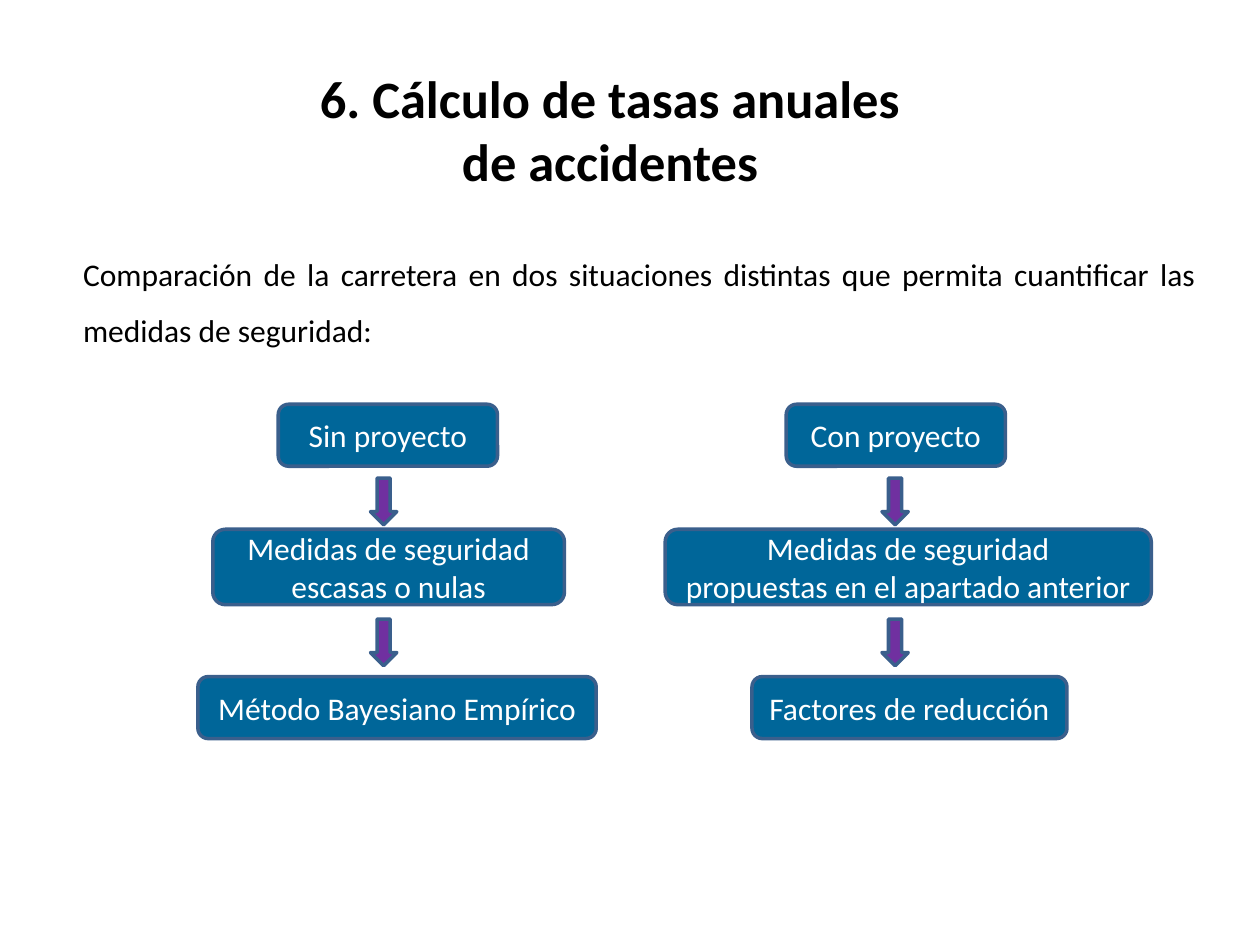
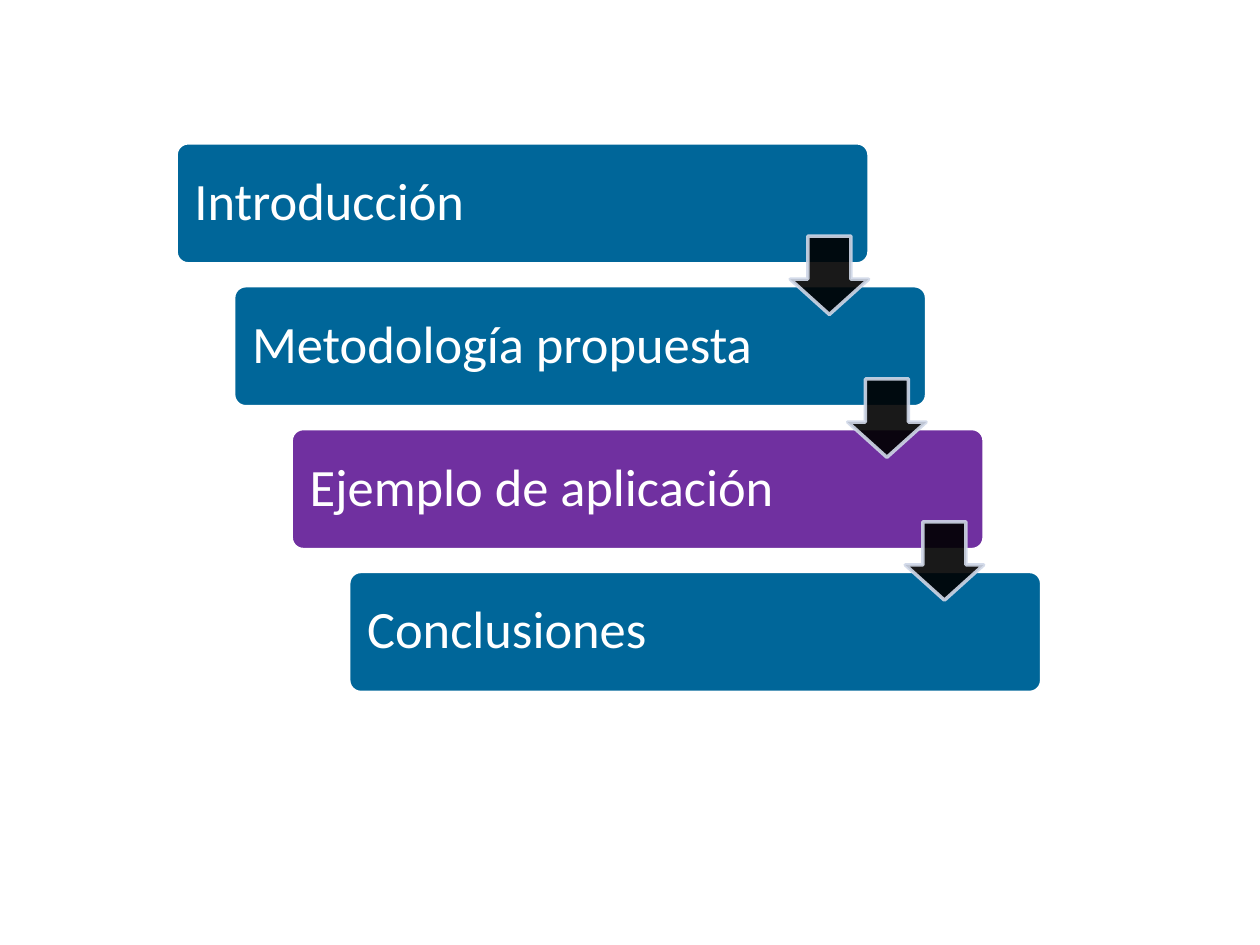
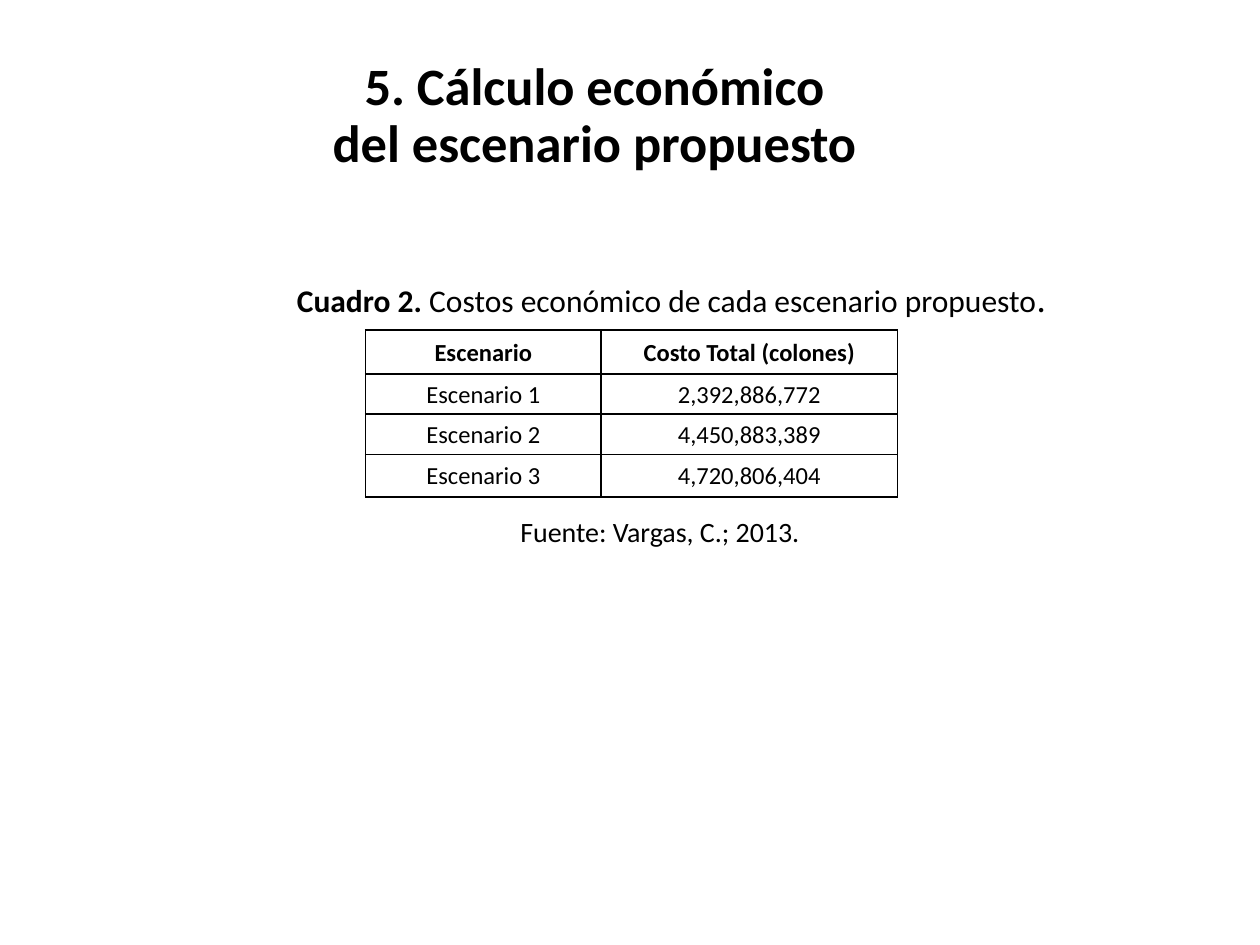
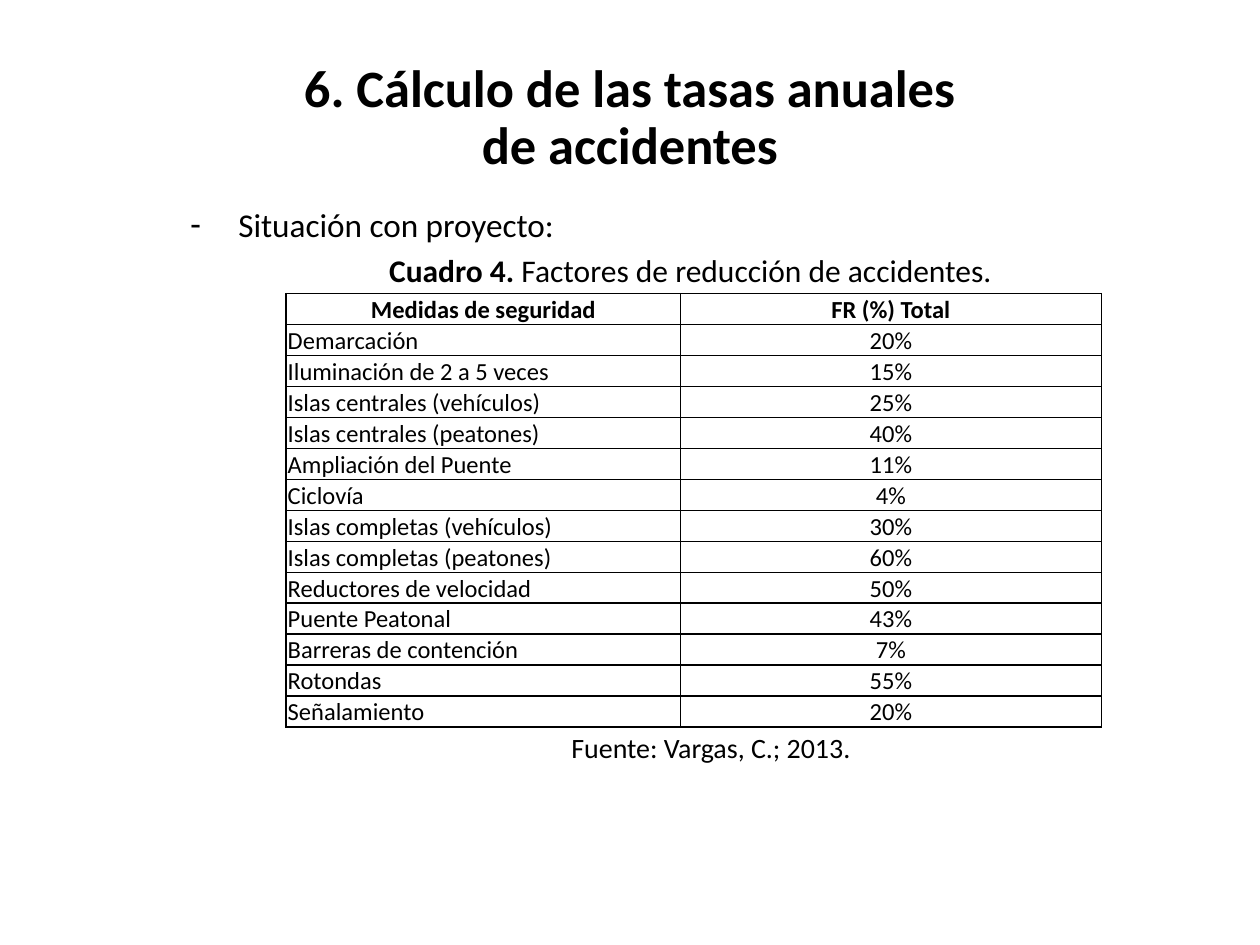
"""Builds four slides on annual accident rates and the cost of road safety scenarios."""
from lxml import etree
from pptx import Presentation
from pptx.dml.color import RGBColor
from pptx.enum.shapes import MSO_SHAPE
from pptx.enum.text import MSO_ANCHOR, MSO_AUTO_SIZE, PP_ALIGN
from pptx.oxml.ns import qn
from pptx.util import Cm, Pt

ROUNDED = MSO_SHAPE.ROUNDED_RECTANGLE
DOWN_ARROW = MSO_SHAPE.DOWN_ARROW
TOP, MIDDLE, BOTTOM = MSO_ANCHOR.TOP, MSO_ANCHOR.MIDDLE, MSO_ANCHOR.BOTTOM
LEFT, CENTER, JUSTIFY = PP_ALIGN.LEFT, PP_ALIGN.CENTER, PP_ALIGN.JUSTIFY

FONT = "Calibri"
BLACK, WHITE = "000000", "FFFFFF"
BLUE, PURPLE = "006699", "7030A0"
OUTLINE, PALE = "3A5F8C", "D0D8E8"
SOURCE = "Fuente: Vargas, C.; 2013."


def write(frame, lines, size, color=BLACK, bold=False, align=CENTER, spacing=1.0, anchor=TOP):
    """Fill a text frame, one paragraph per line and one run per part between bars."""
    frame.word_wrap = True
    frame.vertical_anchor = anchor
    for index, line in enumerate(lines):
        paragraph = frame.paragraphs[0] if index == 0 else frame.add_paragraph()
        paragraph.alignment = align
        paragraph.line_spacing = spacing
        paragraph.space_before = Pt(0)
        for part in line.split("|"):
            run = paragraph.add_run()
            run.text = part
            run.font.name = FONT
            run.font.size = Pt(size)
            run.font.bold = bold
            run.font.color.rgb = RGBColor.from_string(color)


def add_block(slide, kind, left, top, width, height, fill, line):
    """Add a filled preset shape with a two point outline, measured in centimetres."""
    shape = slide.shapes.add_shape(kind, Cm(left), Cm(top), Cm(width), Cm(height))
    shape.shadow.inherit = False
    shape.fill.solid()
    shape.fill.fore_color.rgb = RGBColor.from_string(fill)
    shape.line.color.rgb = RGBColor.from_string(line)
    shape.line.width = Pt(2)
    return shape


presentation = Presentation()
presentation.slide_width, presentation.slide_height = Cm(25.4), Cm(19.05)

outlines = [
    (1, ["6. Cálculo de tasas anuales", "de accidentes"], -0.4, 1.32, 1.0),
    (6, [], 0, 0, 1.0),
    (5, ["5. Cálculo económico", "del escenario propuesto"], -0.71, 1.07, 0.9),
    (1, ["6. Cálculo de las tasas anuales", "de accidentes"], 0, 1.12, 0.9),
]
slides = []
for layout, title_lines, left, top, spacing in outlines:
    slide = presentation.slides.add_slide(presentation.slide_layouts[layout])
    slides.append(slide)
    if title_lines:
        title = slide.shapes.title
        title.left, title.top, title.width, title.height = Cm(left), Cm(top), Cm(25.4), Cm(2.57)
        title.text_frame.auto_size = MSO_AUTO_SIZE.NONE
        write(title.text_frame, title_lines, 30, bold=True, spacing=spacing, anchor=MIDDLE)
comparison_slide, agenda_slide, cost_slide, reduction_slide = slides

bodies = [
    (comparison_slide, (1.42, 3.4, 22.94, 12.27), 1.35, 18, None,
     "Comparación de la carretera en dos situaciones distintas que permita cuantificar "
     "las medidas de seguridad:"),
    (reduction_slide, (3.58, 3.58, 14.71, 1.5), 0.13, 19, "-", "Situación con proyecto:"),
]
for slide, box, margin_top, size, bullet, text in bodies:
    body = slide.placeholders[1]
    body.left, body.top, body.width, body.height = [Cm(length) for length in box]
    body.text_frame.auto_size = MSO_AUTO_SIZE.NONE
    body.text_frame.margin_top = Cm(margin_top)
    write(body.text_frame, [text], size, align=JUSTIFY, spacing=1.5)
    properties = body.text_frame.paragraphs[0]._p.get_or_add_pPr()
    indent = Cm(0.97) if bullet else 0
    properties.set("marL", str(indent))
    properties.set("indent", str(-indent))
    if bullet:
        etree.SubElement(properties, qn("a:buChar")).set("char", bullet)
    else:
        etree.SubElement(properties, qn("a:buNone"))

flow_rows = [(8.15, 1.25), (10.67, 1.52), (13.64, 1.25)]
flow_columns = [
    (7.47, [
        (5.61, 4.42, ["Sin proyecto"]),
        (4.29, 7.09, ["Medidas de seguridad", "escasas o nulas"]),
        (3.99, 8.03, ["Método Bayesiano Empírico"]),
    ]),
    (17.78, [
        (15.85, 4.42, ["Con proyecto"]),
        (13.41, 9.8, ["Medidas de seguridad", "propuestas en el apartado anterior"]),
        (15.16, 6.35, ["Factores de reducción"]),
    ]),
]
for arrow_left, steps in flow_columns:
    for (top, height), (left, width, lines) in zip(flow_rows, steps):
        step = add_block(comparison_slide, ROUNDED, left, top, width, height, BLUE, OUTLINE)
        write(step.text_frame, lines, 18, WHITE, anchor=MIDDLE)
    for arrow_top in (9.64, 12.48):
        add_block(comparison_slide, DOWN_ARROW, arrow_left, arrow_top, 0.53, 0.94, PURPLE, OUTLINE)

STEP_X, STEP_Y = 1.16, 2.88
chapters = ["Introducción", "Metodología propuesta", "Ejemplo de aplicación", "Conclusiones"]
for index, chapter in enumerate(chapters):
    fill = PURPLE if index == 2 else BLUE
    block = add_block(agenda_slide, ROUNDED, 3.55 + index * STEP_X, 2.88 + index * STEP_Y,
                      13.97, 2.44, fill, WHITE)
    block.adjustments[0] = 0.1
    block.text_frame.margin_left = block.text_frame.margin_right = Cm(0.3)
    write(block.text_frame, [chapter], 30, WHITE, align=LEFT, spacing=0.9, anchor=MIDDLE)
for index in range(len(chapters) - 1):
    arrow = add_block(agenda_slide, DOWN_ARROW, 15.93 + index * STEP_X, 4.76 + index * STEP_Y,
                      1.58, 1.58, BLACK, PALE)
    arrow.adjustments[0], arrow.adjustments[1] = 0.55, 0.45
    for color in arrow._element.spPr.iter(qn("a:srgbClr")):
        etree.SubElement(color, qn("a:alpha")).set("val", "90000")

cost_rows = [
    ("Escenario", "Costo Total (colones)"),
    ("Escenario 1", "2,392,886,772"),
    ("Escenario 2", "4,450,883,389"),
    ("Escenario 3", "4,720,806,404"),
]
reduction_rows = [
    ("Medidas de seguridad", "FR (%) Total"),
    ("Demarcación", "20%"),
    ("Iluminación de 2 a 5 veces", "15%"),
    ("Islas centrales (vehículos)", "25%"),
    ("Islas centrales (peatones)", "40%"),
    ("Ampliación del Puente", "11%"),
    ("Ciclovía", "4%"),
    ("Islas completas (vehículos)", "30%"),
    ("Islas completas (peatones)", "60%"),
    ("Reductores de velocidad", "50%"),
    ("Puente Peatonal", "43%"),
    ("Barreras de contención", "7%"),
    ("Rotondas", "55%"),
    ("Señalamiento", "20%"),
]
tables = [
    (cost_slide, cost_rows, (7.37, 6.65), (4.75, 5.97), [0.89, 0.81, 0.81, 0.86], CENTER, MIDDLE,
     "Cuadro 2.| Costos económico de cada escenario propuesto|.", (4.19, 5.44, 18.69, 1.14),
     (2.79, 10.24, 21.03, 0.94)),
    (reduction_slide, reduction_rows, (5.77, 5.92), (7.95, 8.48), [0.62] * 14, LEFT, BOTTOM,
     "Cuadro 4.| Factores de reducción de accidentes.", (5.13, 4.93, 17.58, 1.02),
     (5.56, 14.6, 17.55, 0.94)),
]
for slide, rows, corner, widths, heights, name_align, anchor, caption, caption_box, source_box in tables:
    caption_shape = slide.shapes.add_textbox(*[Cm(length) for length in caption_box])
    write(caption_shape.text_frame, [caption], 18)
    caption_runs = caption_shape.text_frame.paragraphs[0].runs
    caption_runs[0].font.bold = True
    if caption_runs[-1].text == ".":
        caption_runs[-1].font.size = Pt(21)

    frame = slide.shapes.add_table(len(rows), len(widths), Cm(corner[0]), Cm(corner[1]),
                                   Cm(sum(widths)), Cm(sum(heights)))
    table = frame.table
    table.first_row = table.horz_banding = False
    for column, width in zip(table.columns, widths):
        column.width = Cm(width)
    for row_index, values in enumerate(rows):
        table.rows[row_index].height = Cm(heights[row_index])
        for column_index, value in enumerate(values):
            cell = table.cell(row_index, column_index)
            cell.margin_left = cell.margin_right = cell.margin_top = Cm(0.03)
            cell.margin_bottom = 0
            cell.vertical_anchor = anchor
            header = row_index == 0
            align = CENTER if header or column_index else name_align
            write(cell.text_frame, [value], 14, bold=header, align=align)
            cell.vertical_anchor = anchor
            cell_properties = cell._tc.get_or_add_tcPr()
            for side in ("a:lnL", "a:lnR", "a:lnT", "a:lnB"):
                border = etree.SubElement(cell_properties, qn(side), w=str(Pt(1)))
                border_fill = etree.SubElement(border, qn("a:solidFill"))
                etree.SubElement(border_fill, qn("a:srgbClr")).set("val", BLACK)
            cell.fill.background()

    source_shape = slide.shapes.add_textbox(*[Cm(length) for length in source_box])
    write(source_shape.text_frame, [SOURCE], 16)

presentation.save("out.pptx")
